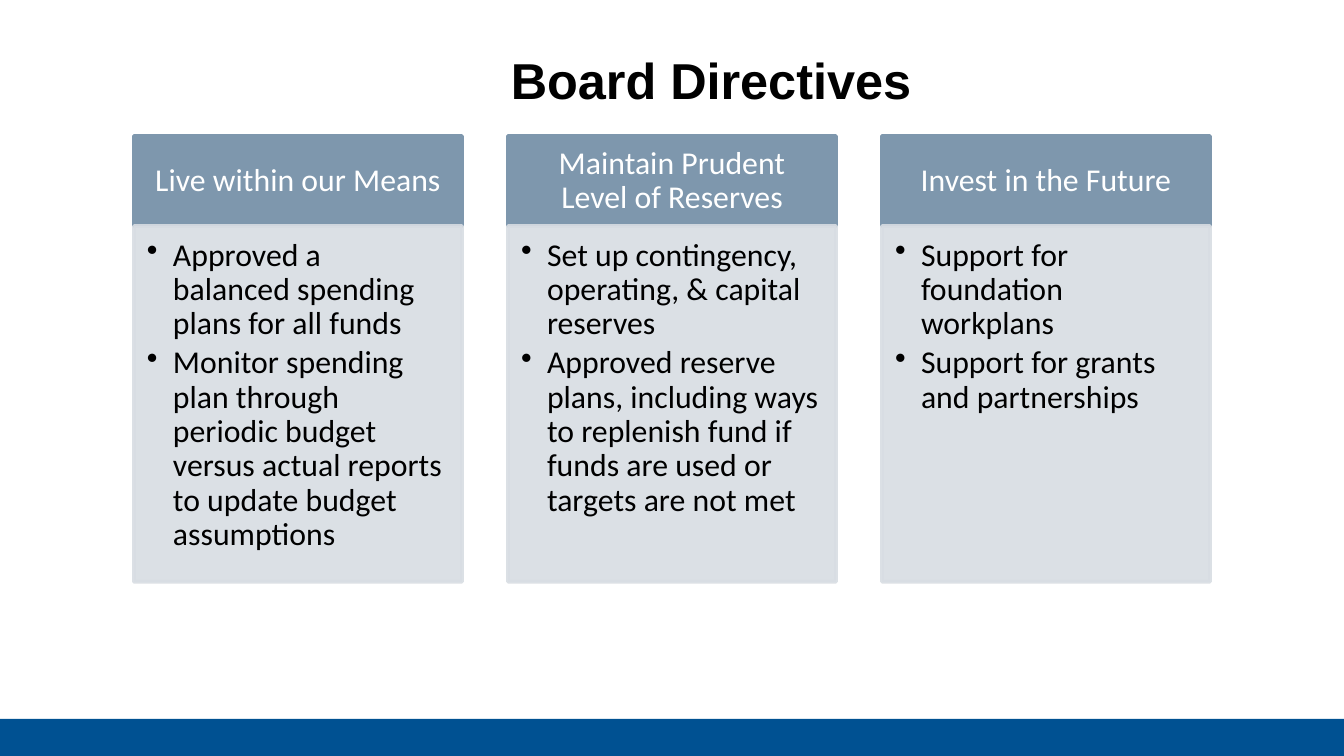
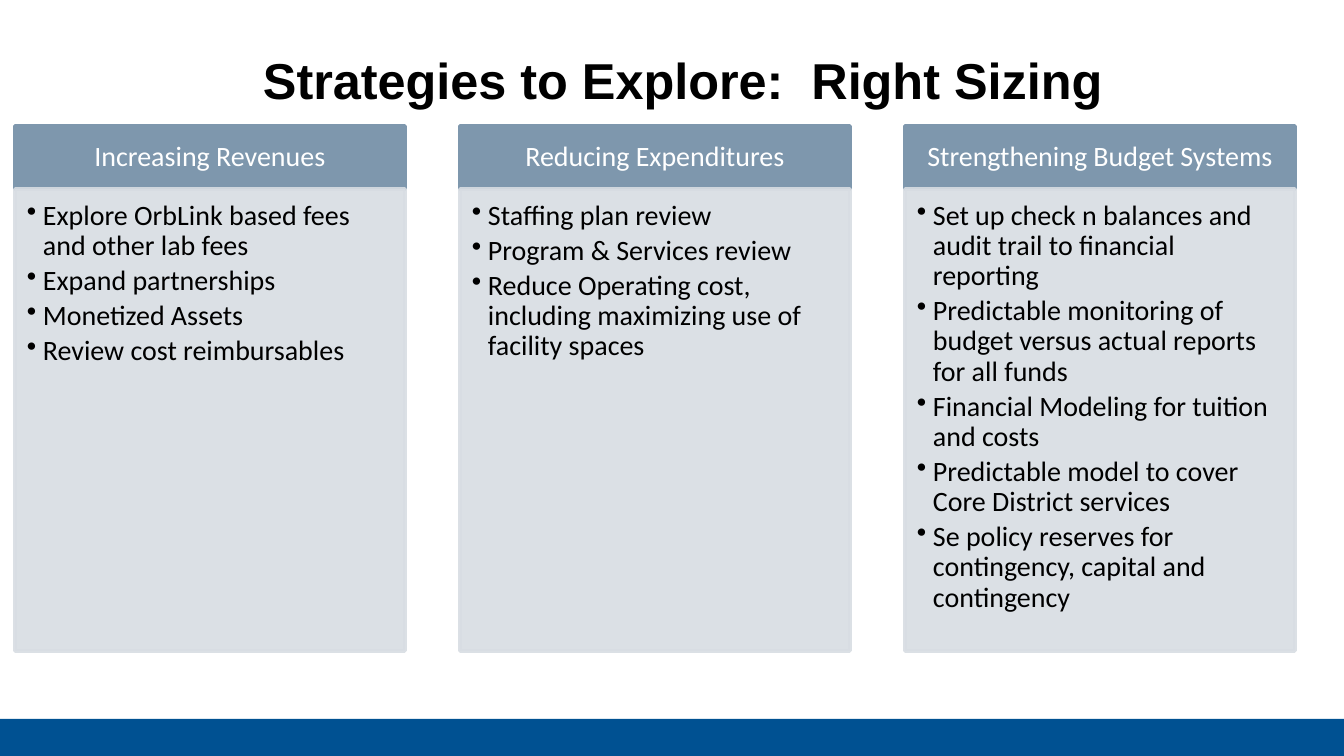
from dataclasses import dataclass

from lxml import etree
from pptx import Presentation
from pptx.dml.color import RGBColor
from pptx.enum.shapes import MSO_SHAPE
from pptx.enum.text import MSO_ANCHOR, MSO_AUTO_SIZE, PP_ALIGN
from pptx.oxml.ns import qn
from pptx.util import Emu, Pt

RECTANGLE = MSO_SHAPE.RECTANGLE
TOP, MIDDLE = MSO_ANCHOR.TOP, MSO_ANCHOR.MIDDLE
LEFT, CENTER = PP_ALIGN.LEFT, PP_ALIGN.CENTER
FIT_SHAPE = MSO_AUTO_SIZE.SHAPE_TO_FIT_TEXT
PX = 914400 / 134.4


@dataclass(frozen=True)
class Theme:
    footer: RGBColor = RGBColor(0x00, 0x51, 0x92)
    header: RGBColor = RGBColor(0x7E, 0x97, 0xAD)
    body: RGBColor = RGBColor(0xD8, 0xDD, 0xE3)
    black: RGBColor = RGBColor(0x00, 0x00, 0x00)
    white: RGBColor = RGBColor(0xFF, 0xFF, 0xFF)
    title_font: str = "Arial"
    text_font: str = "Calibri"
    title_size: Pt = Pt(27)
    outline: Pt = Pt(2)
    bullet_gap: Pt = Pt(2.5)
    body_alpha: int = 90


THEME = Theme()

SLIDES = [
    {
        "title": "Board Directives", "title_left": 202, "title_width": 1018,
        "left": 134, "top": 136, "width": 328, "pitch": 374,
        "header_height": 90, "body_height": 356, "text_size": 17, "indent": 26,
        "header_insets": (17, 11, 17, 11), "body_insets": (13, 13, 17, 20),
        "columns": [
            ("Live within our Means", [
                "Approved a balanced spending plans for all funds",
                "Monitor spending plan through periodic budget versus actual "
                "reports to update budget assumptions",
            ]),
            ("Maintain Prudent Level of Reserves", [
                "Set up contingency, operating, & capital reserves",
                "Approved reserve plans, including ways to replenish fund if "
                "funds are used or targets are not met",
            ]),
            ("Invest in the Future", [
                "Support for foundation workplans",
                "Support for grants and partnerships",
            ]),
        ],
    },
    {
        "title": "Strategies to Explore:  Right Sizing", "title_left": 69, "title_width": 1228,
        "left": 15, "top": 126, "width": 390, "pitch": 445,
        "header_height": 63, "body_height": 462, "text_size": 15, "indent": 16,
        "header_insets": (16, 9, 16, 9), "body_insets": (12, 12, 16, 17),
        "columns": [
            ("Increasing Revenues", [
                "Explore OrbLink based fees and other lab fees",
                "Expand partnerships",
                "Monetized Assets",
                "Review cost reimbursables",
            ]),
            ("Reducing Expenditures", [
                "Staffing plan review",
                "Program & Services review",
                "Reduce Operating cost, including maximizing use of facility spaces",
            ]),
            ("Strengthening Budget Systems", [
                "Set up check n balances and audit trail to financial reporting",
                "Predictable monitoring of budget versus actual reports for all funds",
                "Financial Modeling for tuition and costs",
                "Predictable model to cover Core District services",
                "Se policy reserves for contingency, capital and contingency",
            ]),
        ],
    },
]


def add_box(slide, box, color, alpha=100):
    """Add a filled rectangle, outlined in its own colour; box is in px."""
    shape = slide.shapes.add_shape(RECTANGLE, *(Emu(round(n * PX)) for n in box))
    shape.shadow.inherit = False
    shape.fill.solid()
    shape.fill.fore_color.rgb = color
    shape.line.color.rgb = color
    shape.line.width = THEME.outline
    if alpha < 100:
        for color_element in shape._element.spPr.iter(qn("a:srgbClr")):
            etree.SubElement(color_element, qn("a:alpha"), val=str(alpha * 1000))
    return shape


def write_text(shape, lines, design, color, insets, indent=0):
    """Fill a box with paragraphs: bulleted if indented, else centred."""
    frame = shape.text_frame
    frame.word_wrap = True
    frame.vertical_anchor = TOP if indent else MIDDLE
    frame.margin_left, frame.margin_top, frame.margin_right, frame.margin_bottom = (
        Emu(round(n * PX)) for n in insets)
    for index, line in enumerate(lines):
        paragraph = frame.add_paragraph() if index else frame.paragraphs[0]
        paragraph.text = line
        paragraph.alignment = LEFT if indent else CENTER
        paragraph.line_spacing = 0.9
        paragraph.font.name = THEME.text_font
        paragraph.font.size = Pt(design["text_size"])
        paragraph.font.color.rgb = color
        if indent:
            paragraph.level = 1
            paragraph.space_after = THEME.bullet_gap
            properties = paragraph._p.get_or_add_pPr()
            properties.set("marL", str(round(indent * PX)))
            properties.set("indent", str(-round(indent * PX)))
            bullet = etree.Element(qn("a:buChar"), char="•")
            properties.find(qn("a:defRPr")).addprevious(bullet)


presentation = Presentation()
presentation.slide_width = Emu(round(1344 * PX))
presentation.slide_height = Emu(round(756 * PX))

for design in SLIDES:
    slide = presentation.slides.add_slide(presentation.slide_layouts[6])
    footer = add_box(slide, (0, 719, 1344, 37), THEME.footer)
    footer.line.fill.background()

    title_box = (design["title_left"], 42, design["title_width"], 75)
    title = slide.shapes.add_textbox(*(Emu(round(n * PX)) for n in title_box))
    title.text_frame.word_wrap = True
    title.text_frame.auto_size = FIT_SHAPE
    paragraph = title.text_frame.paragraphs[0]
    paragraph.text = design["title"]
    paragraph.alignment = CENTER
    paragraph.font.name = THEME.title_font
    paragraph.font.size = THEME.title_size
    paragraph.font.bold = True
    paragraph.font.color.rgb = THEME.black

    top, width, header_height = design["top"], design["width"], design["header_height"]
    for column, (heading, bullets) in enumerate(design["columns"]):
        left = design["left"] + column * design["pitch"]
        header = add_box(slide, (left, top, width, header_height), THEME.header)
        write_text(header, [heading], design, THEME.white, design["header_insets"])
        body = add_box(slide, (left, top + header_height, width, design["body_height"]),
                       THEME.body, THEME.body_alpha)
        write_text(body, bullets, design, THEME.black, design["body_insets"], design["indent"])

presentation.save("out.pptx")
